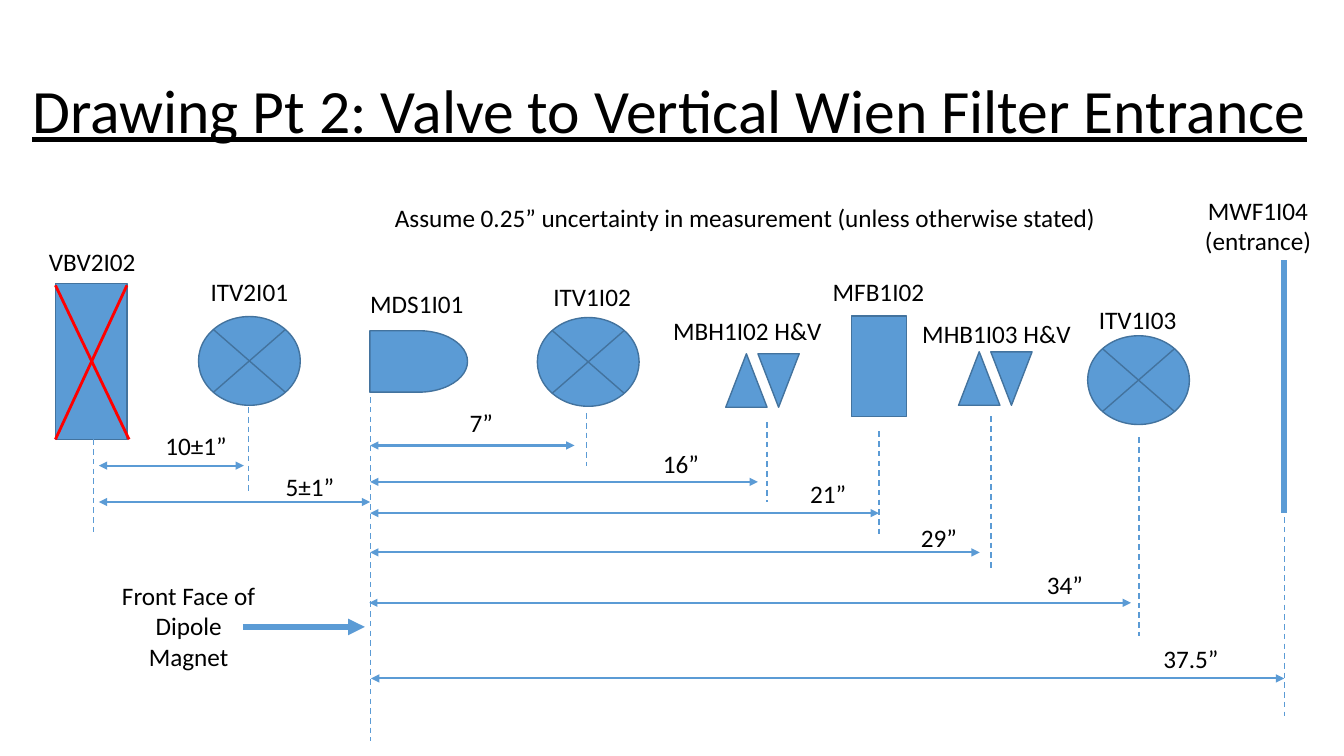
"""Beamline layout from the valve to the vertical Wien filter entrance."""
from lxml.etree import SubElement
from pptx import Presentation
from pptx.dml.color import RGBColor
from pptx.enum.dml import MSO_LINE
from pptx.enum.shapes import MSO_CONNECTOR, MSO_SHAPE
from pptx.enum.text import MSO_ANCHOR, MSO_AUTO_SIZE, PP_ALIGN
from pptx.oxml.ns import qn
from pptx.util import Pt

COLORS = {"beam": "5B9BD5", "edge": "43739E", "closed": "FF0000", "text": "000000"}
FONT = "Calibri"
TITLE = "Drawing Pt 2: Valve to Vertical Wien Filter Entrance"
NOTE = ("Assume 0.25” uncertainty in measurement (unless otherwise stated)", 275, 141.1, 533)
LABEL_HEIGHT = 29.1

# text, left, top, width
LABELS = [
    ("VBV2I02", 18.7, 172.1, 94.3),
    ("ITV2I01", 131, 193.7, 94.3),
    ("MDS1I01", 250.6, 202.3, 94.3),
    ("ITV1I02", 375.8, 197.3, 94.3),
    ("MBH1I02 H&V", 457.9, 221.8, 152),
    ("MFB1I02", 551.5, 193.7, 152),
    ("MHB1I03 H&V", 635.8, 223.9, 152),
    ("ITV1I03", 736.6, 213.8, 152),
    ("MWF1I04 (entrance)", 837.4, 136.1, 122.4),
    ("Front Face of Dipole Magnet", 77.8, 411.1, 113.8),
]

VALVE = (39.6, 202.3, 51.1, 111.6)
VALVE_CROSS = [(39.6, 203.8, 92.2, 313.9), (90.7, 203.8, 39.6, 313.9)]
DIPOLE = (264.2, 236.2, 69.8, 43.9)
FARADAY_CUP = (608, 225.7, 39.6, 72)
VIEWERS = [(141.8, 226.1), (383.8, 226.8), (776.9, 239.8)]
VIEWER_SIZE = (72.7, 63.4)
CORRECTORS = [(518.4, 252.7), (684.7, 251.3)]
CORRECTOR_SIZE = (29.5, 38.2)
CORRECTOR_STEP = 23
FILTER_ENTRANCE = (917.3, 185.8, 917.3, 366.5)
FRONT_FACE_ARROW = (173.5, 447.8, 260.6, 447.8)

# x, top, bottom
GUIDES = [
    (66.6, 313.9, 382.3), (177.5, 290.9, 352.1), (264.6, 283.7, 529.2),
    (419, 295.2, 332.6), (547.9, 301.7, 358.6), (627.8, 308.2, 382.3),
    (707.8, 297.4, 406.8), (813.6, 312.5, 454.3), (917.3, 369.4, 511.2),
]

# distance, label left, label top, label width, from x, to x, y
DISTANCES = [
    ("10±1”", 105.8, 303.8, 68.4, 70.6, 174.2, 332.6),
    ("5±1”", 185, 333.4, 72.7, 70.6, 264.4, 358.6),
    ("7”", 307.4, 287.3, 72.7, 264.4, 410.4, 318.2),
    ("16”", 450, 316.8, 72.7, 264.4, 541.4, 344.2),
    ("21”", 555.1, 338.4, 72.7, 264.4, 627.8, 366.5),
    ("29”", 634.3, 369.4, 72.7, 264.4, 699.8, 394.6),
    ("34”", 724.3, 403.2, 72.7, 263.7, 807.8, 430.6),
    ("37.5”", 814.3, 455.8, 72.7, 265, 917.3, 484.6),
]


def color(name):
    return RGBColor.from_string(COLORS[name])


def add_words(frame, words, size):
    run = frame.paragraphs[0].add_run()
    run.text = words
    run.font.name, run.font.size = FONT, Pt(size)
    run.font.color.rgb = color("text")
    return run


def add_label(slide, words, left, top, width, align=PP_ALIGN.CENTER):
    box = slide.shapes.add_textbox(Pt(left), Pt(top), Pt(width), Pt(LABEL_HEIGHT))
    box.text_frame.word_wrap = True
    box.text_frame.auto_size = MSO_AUTO_SIZE.SHAPE_TO_FIT_TEXT
    box.text_frame.paragraphs[0].alignment = align
    add_words(box.text_frame, words, 18)


def add_device(shapes, kind, left, top, width, height):
    device = shapes.add_shape(kind, Pt(left), Pt(top), Pt(width), Pt(height))
    device.shadow.inherit = False
    device.fill.solid()
    device.fill.fore_color.rgb = color("beam")
    device.line.color.rgb = color("edge")
    device.line.width = Pt(1)
    return device


def add_line(shapes, ends, weight, tint="beam", dashed=False, heads=()):
    line = shapes.add_connector(MSO_CONNECTOR.STRAIGHT, *[Pt(value) for value in ends])
    line.line.color.rgb = color(tint)
    line.line.width = Pt(weight)
    if dashed:
        line.line.dash_style = MSO_LINE.DASH
    outline = line.line._get_or_add_ln()
    for head in heads:
        SubElement(outline, qn(f"a:{head}"), type="triangle")
    SubElement(line._element.spPr, qn("a:effectLst"))


def add_title(slide):
    title = slide.shapes.title
    title.left, title.top, title.width, title.height = Pt(15.84), Pt(28.8), Pt(931.7), Pt(104.4)
    frame = title.text_frame
    frame.word_wrap = True
    frame.auto_size = MSO_AUTO_SIZE.NONE
    frame.vertical_anchor = MSO_ANCHOR.MIDDLE
    frame.paragraphs[0].alignment = PP_ALIGN.LEFT
    frame.paragraphs[0].line_spacing = 0.9
    add_words(frame, TITLE, 44).font.underline = True


def add_devices(slide):
    valve = slide.shapes.add_group_shape().shapes
    add_device(valve, MSO_SHAPE.RECTANGLE, *VALVE)
    for stroke in VALVE_CROSS:
        add_line(valve, stroke, 2, "closed")
    add_device(slide.shapes, MSO_SHAPE.FLOWCHART_DELAY, *DIPOLE)
    add_device(slide.shapes, MSO_SHAPE.RECTANGLE, *FARADAY_CUP)
    for place in VIEWERS:
        add_device(slide.shapes, MSO_SHAPE.FLOWCHART_SUMMING_JUNCTION, *place, *VIEWER_SIZE)
    for left, top in CORRECTORS:
        pair = slide.shapes.add_group_shape().shapes
        for index in range(2):
            coil = add_device(pair, MSO_SHAPE.ISOSCELES_TRIANGLE,
                              left + index * CORRECTOR_STEP, top, *CORRECTOR_SIZE)
            coil.rotation = 180 * index
    add_line(slide.shapes, FILTER_ENTRANCE, 4)


def main():
    deck = Presentation()
    deck.slide_width, deck.slide_height = Pt(960), Pt(540)
    slide = deck.slides.add_slide(deck.slide_layouts[5])
    add_title(slide)
    add_devices(slide)
    for x, top, bottom in GUIDES:
        add_line(slide.shapes, (x, top, x, bottom), 1, dashed=True)
    for distance, left, top, width, start, end, y in DISTANCES:
        add_line(slide.shapes, (start, y, end, y), 1.5, heads=("headEnd", "tailEnd"))
        add_label(slide, distance, left, top, width)
    add_line(slide.shapes, FRONT_FACE_ARROW, 4, heads=("tailEnd",))
    add_label(slide, *NOTE, align=PP_ALIGN.LEFT)
    for label in LABELS:
        add_label(slide, *label)
    deck.save("out.pptx")


if __name__ == "__main__":
    main()
